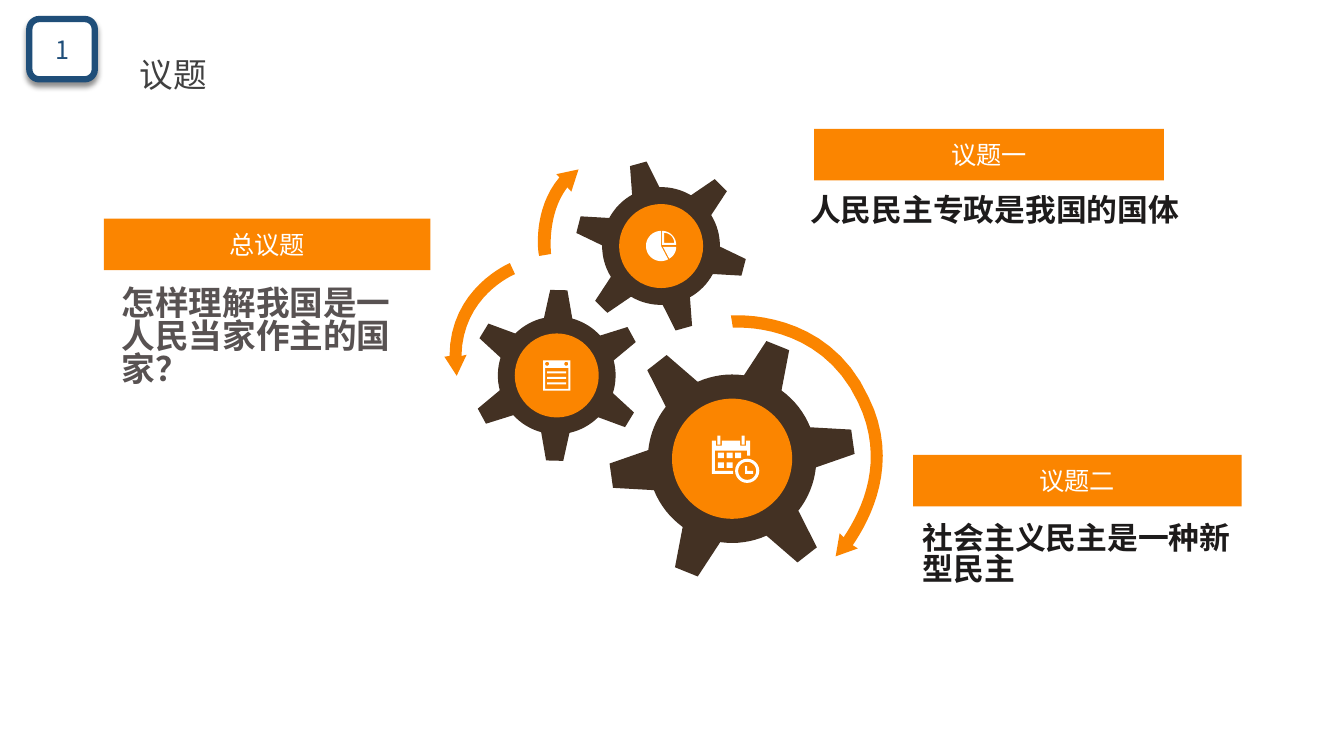
import math
from dataclasses import dataclass

import pptx
import pptx.dml.color
import pptx.enum.shapes
import pptx.enum.text
import pptx.oxml
import pptx.util
from pptx.util import Cm


@dataclass(frozen=True)
class Theme:
    orange: str = "FB8500"
    brown: str = "433123"
    navy: str = "1F4E79"
    white: str = "FFFFFF"
    title: str = "404040"
    question: str = "585252"
    topic: str = "1D1B1B"
    latin: str = "Arial"
    chinese: str = "Noto Sans CJK SC"
    label_size: int = 18
    topic_size: int = 22
    title_size: int = 24


THEME = Theme()
SHAPE = pptx.enum.shapes.MSO_SHAPE
CENTER = pptx.enum.text.PP_ALIGN.CENTER
MIDDLE = pptx.enum.text.MSO_ANCHOR.MIDDLE
ICON_UNIT = 0.0254  # cm per step of the icon grid

# Arrow outlines in cm: a pair is a corner, six numbers are a Bezier curve.
ARROWS = [
    [(12.98, 6.91), (12.85, 6.63), (12.85, 6.63, 11.33, 7.26, 11.33, 8.97),
     (11.2, 8.99), (11.51, 9.47), (11.76, 8.94), (11.63, 8.97),
     (11.66, 7.47, 12.93, 6.93, 12.98, 6.91)],
    [(14.4, 4.83), (14.58, 4.27), (14.02, 4.39), (14.1, 4.47),
     (13.41, 5.28, 13.56, 6.4, 13.59, 6.45), (13.89, 6.4),
     (13.89, 6.4, 13.77, 5.41, 14.3, 4.72)],
    [(21.89, 10.01), (20.85, 7.75, 18.47, 7.95, 18.42, 7.95), (18.47, 8.26),
     (18.49, 8.26, 20.65, 8.08, 21.62, 10.13),
     (22.33, 11.61, 21.72, 12.85, 21.26, 13.54), (21.16, 13.44),
     (21.06, 14.02), (21.62, 13.82), (21.49, 13.74),
     (21.92, 13.11, 22.71, 11.66, 21.89, 10.01)],
]


def color(value):
    return pptx.dml.color.RGBColor.from_string(value)


def polar(radius, degrees):
    """Point at an angle measured clockwise from twelve o'clock."""
    angle = math.radians(degrees)
    return radius * math.sin(angle), -radius * math.cos(angle)


def arc(x, y, radius, start=0, stop=360, steps=24):
    points = (polar(radius, start + (stop - start) * i / steps) for i in range(steps + 1))
    return [(x + dx, y + dy) for dx, dy in points]


def wedge(x, y, radius, start, stop):
    return [(x, y)] + arc(x, y, radius, start, stop)


def box_outline(left, top, right, bottom):
    return [(left, top), (right, top), (right, bottom), (left, bottom)]


def flatten(outline, steps=16):
    """Turn corners and Bezier curves into plain points."""
    points = []
    for part in outline:
        if len(part) == 2:
            points.append(part)
            continue
        controls = [points[-1], part[:2], part[2:4], part[4:]]
        for i in range(1, steps + 1):
            t = i / steps
            weights = ((1 - t) ** 3, 3 * t * (1 - t) ** 2, 3 * t * t * (1 - t), t ** 3)
            points.append(tuple(sum(w * c[axis] for w, c in zip(weights, controls))
                                for axis in (0, 1)))
    return points


def paint(shape, fill):
    shape.shadow.inherit = False
    shape.fill.solid()
    shape.fill.fore_color.rgb = color(fill)
    shape.line.fill.background()


def add_outline(page, contours, fill, origin=(0, 0), unit=1.0):
    """Draw closed contours as one shape; inner contours become holes."""
    placed = [[(Cm(origin[0] + x * unit), Cm(origin[1] + y * unit)) for x, y in contour]
              for contour in contours]
    builder = page.shapes.build_freeform(*placed[0][0])
    builder.add_line_segments(placed[0][1:], close=True)
    for contour in placed[1:]:
        builder.move_to(*contour[0])
        builder.add_line_segments(contour[1:], close=True)
    paint(builder.convert_to_shape(), fill)


def add_gear(page, center, tip, phase, icon):
    """Six-toothed gear with a hub; phase is the angle of its first tooth."""
    body, hub = 0.687 * tip, 0.49 * tip
    points = []
    for tooth in range(6):
        angle = phase + 60 * tooth
        points += [polar(tip, angle - 5.75), polar(tip, angle + 5.75)]
        points += arc(0, 0, body, angle + 13.9, angle + 46.1, 8)
    add_outline(page, [points], THEME.brown, center)
    disc = page.shapes.add_shape(SHAPE.OVAL, Cm(center[0] - hub), Cm(center[1] - hub),
                                 Cm(2 * hub), Cm(2 * hub))
    paint(disc, THEME.orange)
    add_outline(page, icon, THEME.white, center, ICON_UNIT)


def pie_icon():
    return [wedge(0, 0, 15, 152, 360), wedge(1, -1, 14, 0, 90),
            wedge(3, -3, 10, 0, 90), wedge(2, 1, 13, 90, 152)]


def document_icon():
    holes = [arc(x, -11.5, 2) for x in (-9.5, 9.5)]
    lines = [box_outline(-9.5, y, 9.5, y + 2) for y in (-4, 1.5, 7)]
    return [box_outline(-13.5, -15, 13.5, 15), box_outline(-11.5, -7.5, 11.5, 13.5)] + holes + lines


def calendar_icon():
    frame = [(-20, -18), (-16, -18), (-16, -13), (-10, -13), (-10, -18), (8, -18),
             (8, -13), (14, -13), (14, -18), (18, -18), (18, -3), (15, -3), (15, -8),
             (-17, -8), (-17, 12), (1, 12), (1, 15), (-20, 15)]
    pegs = [box_outline(x, -23, x + 3, -14) for x in (-14.5, 9.5)]
    cells = [box_outline(x, y, x + 6, y + 5.5) for y in (-6, 3.5) for x in (-14, -5.5, 3)][:5]
    hands = [(13, 7), (15, 7), (15, 12), (21, 12), (21, 15), (13, 15)]
    return [frame, *pegs, *cells, arc(15, 12, 12), arc(15, 12, 9), hands]


def write(shape, text, size, tint, font, bold=False, align=None, spacing=None):
    para = shape.text_frame.paragraphs[0]
    para.alignment = align
    para.line_spacing = spacing
    span = para.add_run()
    span.text = text
    span.font.size = pptx.util.Pt(size)
    span.font.bold = bold
    span.font.name = font
    span.font.color.rgb = color(tint)
    east_asian = pptx.oxml.parse_xml(
        f'<a:ea xmlns:a="http://schemas.openxmlformats.org/drawingml/2006/main" '
        f'typeface="{THEME.chinese}"/>')
    span.font.name = font
    span.font._element.find(pptx.oxml.ns.qn("a:latin")).addnext(east_asian)


def add_label(page, left, top, width, text):
    label = page.shapes.add_shape(SHAPE.RECTANGLE, Cm(left), Cm(top), Cm(width), Cm(1.3))
    paint(label, THEME.orange)
    label.text_frame.vertical_anchor = MIDDLE
    write(label, text, THEME.label_size, THEME.white, THEME.latin, align=CENTER)


def add_statement(page, left, top, width, text, size, tint, wrap=True):
    box = page.shapes.add_textbox(Cm(left), Cm(top), Cm(width), Cm(1.2))
    box.text_frame.word_wrap = wrap
    write(box, text, size, tint, THEME.chinese, bold=True, spacing=0.83)


def add_badge(page, number):
    badge = page.shapes.add_shape(SHAPE.ROUNDED_RECTANGLE, Cm(0.74), Cm(0.48), Cm(1.65), Cm(1.52))
    paint(badge, THEME.white)
    badge.line.color.rgb = color(THEME.navy)
    badge.line.width = pptx.util.Pt(4.5)
    effects = badge._element.spPr.find(pptx.oxml.ns.qn("a:effectLst"))
    effects.append(pptx.oxml.parse_xml(
        '<a:outerShdw xmlns:a="http://schemas.openxmlformats.org/drawingml/2006/main" '
        'blurRad="50800" dist="38100" dir="5400000" rotWithShape="0">'
        '<a:srgbClr val="000000"><a:alpha val="43000"/></a:srgbClr></a:outerShdw>'))
    badge.text_frame.vertical_anchor = MIDDLE
    write(badge, number, THEME.label_size, THEME.navy, THEME.chinese, align=CENTER)


def add_title(page, text):
    box = page.shapes.add_textbox(Cm(1.75), Cm(1.17), Cm(17.02), Cm(1.37))
    box.text_frame.word_wrap = True
    box.text_frame.margin_left = Cm(1.77)
    box.text_frame.vertical_anchor = MIDDLE
    write(box, text, THEME.title_size, THEME.title, THEME.latin)


def main():
    deck = pptx.Presentation()
    deck.slide_width, deck.slide_height = Cm(33.87), Cm(19.05)
    page = deck.slides.add_slide(deck.slide_layouts[6])
    add_badge(page, "1")
    for outline in ARROWS:
        add_outline(page, [flatten(outline)], THEME.orange)
    add_gear(page, (18.45, 11.56), 3.09, 22, calendar_icon())
    add_gear(page, (14.03, 9.46), 2.16, 1.4, document_icon())
    add_gear(page, (16.66, 6.2), 2.16, -15.5, pie_icon())
    add_label(page, 23.01, 11.46, 8.28, "议题二")
    add_label(page, 2.62, 5.51, 8.23, "总议题")
    add_label(page, 20.52, 3.25, 8.81, "议题一")
    add_title(page, "议题")
    add_statement(page, 2.82, 7.14, 7.8, "怎样理解我国是一人民当家作主的国家？",
                  THEME.title_size, THEME.question)
    add_statement(page, 20.17, 4.83, 9.86, "人民民主专政是我国的国体",
                  THEME.topic_size, THEME.topic, wrap=False)
    add_statement(page, 23.01, 13.11, 8.51, "社会主义民主是一种新型民主",
                  THEME.topic_size, THEME.topic)
    deck.save("out.pptx")


if __name__ == "__main__":
    main()
